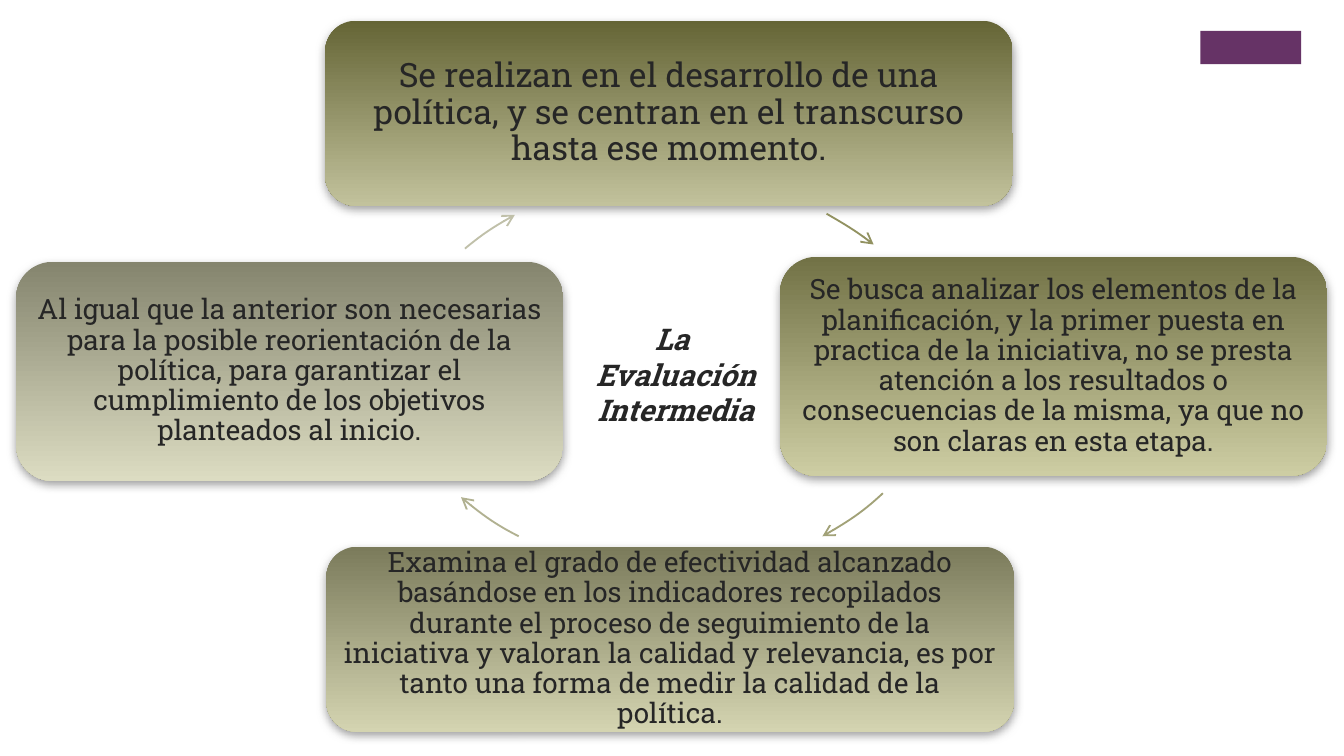
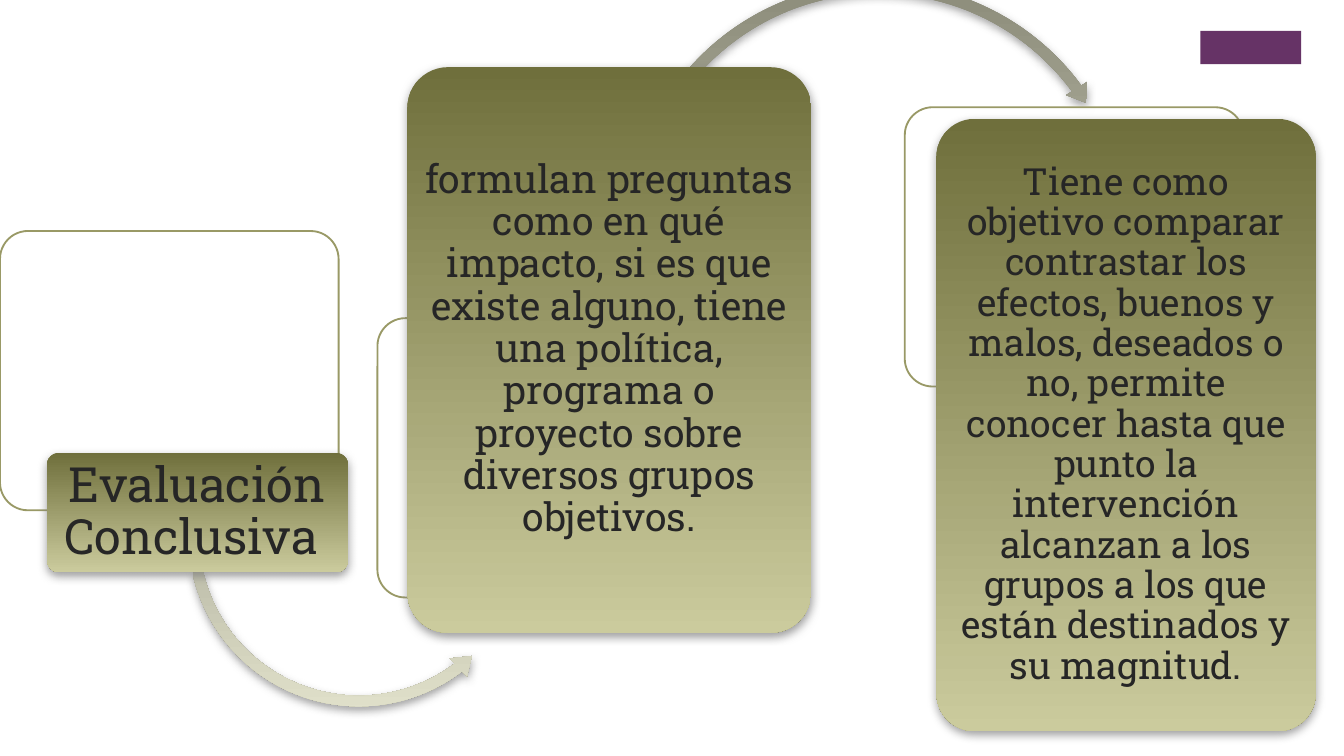
"""Build two slides on intermediate and conclusive policy evaluation."""
from lxml.etree import SubElement
from pptx import Presentation
from pptx.dml.color import RGBColor
from pptx.enum.shapes import MSO_SHAPE
from pptx.enum.text import MSO_ANCHOR, MSO_AUTO_SIZE, PP_ALIGN
from pptx.oxml.ns import qn
from pptx.util import Pt

INK = RGBColor(0x26, 0x26, 0x26)
PURPLE = RGBColor(0x66, 0x33, 0x66)
WHITE = RGBColor(0xFF, 0xFF, 0xFF)
OLIVE = RGBColor(0x99, 0x99, 0x66)
GRAY = RGBColor(0x80, 0x80, 0x80)
MOSS = RGBColor(0x6F, 0x6F, 0x3C), RGBColor(0xCB, 0xCB, 0x9D)
STONE = RGBColor(0x8B, 0x8B, 0x79), RGBColor(0xE1, 0xE1, 0xCB)
TYPE = {"name": "Roboto Slab"}
ROUND = MSO_SHAPE.ROUNDED_RECTANGLE


def shade(slide, kind, place, tones):
    """Add a borderless shape with a vertical gradient and a soft shadow."""
    shape = slide.shapes.add_shape(kind, *map(Pt, place))
    shape.fill.gradient()
    shape.fill.gradient_angle = 270
    for stop, tone in zip(shape.fill.gradient_stops, tones):
        stop.color.rgb = tone
    shape.line.fill.background()
    shape.shadow.inherit = False
    effects = shape._element.spPr.find(qn("a:effectLst"))
    outer = SubElement(effects, qn("a:outerShdw"), blurRad=str(Pt(5)),
                       dist=str(Pt(2)), dir="5400000", rotWithShape="0")
    color = SubElement(outer, qn("a:srgbClr"), val=str(GRAY))
    SubElement(color, qn("a:alpha"), val="75000")
    return shape


def write(shape, lines, form, pads, lead):
    """Set centred paragraphs with the given font values and insets."""
    frame = shape.text_frame
    frame.word_wrap = True
    frame.margin_left = frame.margin_right = Pt(pads[0])
    frame.margin_top = frame.margin_bottom = Pt(pads[1])
    frame.text = "\n".join(lines)
    for para in frame.paragraphs:
        para.alignment = PP_ALIGN.CENTER
        para.line_spacing = lead
        for run in para.runs:
            run.font.color.rgb = INK
            for key, value in {**TYPE, **form}.items():
                setattr(run.font, key, value)
    return frame


deck = Presentation()
deck.slide_width, deck.slide_height = Pt(720), Pt(405)
slides = []
for _ in range(2):
    slide = deck.slides.add_slide(deck.slide_layouts[6])
    badge = slide.shapes.add_shape(MSO_SHAPE.RECTANGLE, Pt(643), Pt(16.6), Pt(54), Pt(17.8))
    badge.fill.solid()
    badge.fill.fore_color.rgb = PURPLE
    badge.line.fill.background()
    badge.shadow.inherit = False
    slides.append(slide)
cycle, steps = slides

WIDE, TALL, RING = (368.4, 99.2), (293.2, 117.4), 310.3
STAGES = [
    ((174.2, 11.1), WIDE, ("656536", "C2C29C"), 18, 5,
     "Se realizan en el desarrollo de una política, y se centran en el transcurso "
     "hasta ese momento.",
     "929261", (214.6, 96.5), [(442.8, 114.5), (451.4, 119.5), (460, 124.6), (468, 131)]),
    ((417.8, 137.6), TALL, ("727246", "CDCDA3"), 15, 4.5,
     "Se busca analizar los elementos de la planificación, y la primer puesta en "
     "practica de la iniciativa, no se presta atención a los resultados o "
     "consecuencias de la misma, ya que no son claras en esta etapa.",
     "A2A278", (211.7, -5), [(473, 264.2), (463, 273.6), (452.2, 280.8), (440.6, 287.3)]),
    ((174.8, 292.9), WIDE, ("7B7B5B", "D4D4B1"), 15, 4.5,
     "Examina el grado de efectividad alcanzado basándose en los indicadores "
     "recopilados durante el proceso de seguimiento de la iniciativa y valoran la "
     "calidad y relevancia, es por tanto una forma de medir la calidad de la política.",
     "B1B191", (195.8, -4.3), [(277.9, 287.3), (266.4, 281.5), (256.3, 274.3), (247, 266.4)]),
    ((8.6, 140.3), TALL, ("85856E", "DCDCC2"), 15, 4.5,
     "Al igual que la anterior son necesarias para la posible reorientación de la "
     "política, para garantizar el cumplimiento de los objetivos planteados al inicio.",
     "C0C0A9", (194.4, 96.5), [(249.1, 133.2), (257.8, 126), (266.4, 120.2), (275.8, 115.2)]),
]
for spot, size, tones, points, pad, words, tint, (left, top), curve in STAGES:
    box = shade(cycle, ROUND, spot + size, map(RGBColor.from_string, tones))
    frame = write(box, [words], {"size": Pt(points)}, (pad, pad), 0.9)
    frame.vertical_anchor = MSO_ANCHOR.MIDDLE
    pen = cycle.shapes.build_freeform(Pt(left), Pt(top))
    pen.add_line_segments([(Pt(left + RING), Pt(top + RING))], close=False)
    arc = pen.convert_to_shape()
    trail = next(arc._element.iter(qn("a:path")))
    for node in list(trail):
        trail.remove(node)
    for tag, knots in (("a:moveTo", curve[:1]), ("a:cubicBezTo", curve[1:])):
        node = SubElement(trail, qn(tag))
        for x, y in knots:
            SubElement(node, qn("a:pt"), x=str(Pt(x - left)), y=str(Pt(y - top)))
    arc.fill.background()
    arc.line.color.rgb = RGBColor.from_string(tint)
    arc.line.width = Pt(1)
    arc.shadow.inherit = False
    SubElement(arc._element.spPr.find(qn("a:ln")), qn("a:tailEnd"), type="arrow")

title = cycle.shapes.add_textbox(Pt(309.7), Pt(168.1), Pt(104.4), Pt(65.5))
frame = write(title, ["La ", "Evaluación", "Intermedia"],
              {"size": Pt(16), "bold": True, "italic": True}, (7.2, 3.6), 1)
frame.auto_size = MSO_AUTO_SIZE.SHAPE_TO_FIT_TEXT

LEFT, RIGHT = MSO_SHAPE.LEFT_CIRCULAR_ARROW, MSO_SHAPE.CIRCULAR_ARROW
CARDS = [
    ((0, 123.8), (25.2, 242.6, 161.3, 64), 26, (3.6, 2.6), "Evaluación Conclusiva ",
     (LEFT, (97.2, 192.2, 190, 190), (0.03, 3.684, 31.688, 100.493, 0.035))),
    ((202.2, 170.5), (218.3, 36, 216.2, 303), 21, (3, 2),
     "formulan preguntas como en qué impacto, si es que existe alguno, tiene una "
     "política, programa o proyecto sobre diversos grupos objetivos.",
     (RIGHT, (331.9, -13, 277.2, 277.2), (0.021, 2.472, 194.201, 124.184, 0.024))),
    ((484.7, 57.5), (501.7, 63.7, 203.2, 328), 20, (3, 2),
     "Tiene como objetivo comparar contrastar los efectos, buenos y malos, deseados "
     "o no, permite conocer hasta que punto la intervención alcanzan a los grupos a "
     "los que están destinados y su magnitud.", None),
]
for spot, place, points, pads, words, turn in CARDS:
    back = steps.shapes.add_shape(ROUND, *map(Pt, spot + (181.4, 149.6)))
    back.adjustments[0] = 0.1
    back.fill.solid()
    back.fill.fore_color.rgb = WHITE
    color = back._element.spPr.find(qn("a:solidFill"))[0]
    SubElement(color, qn("a:alpha"), val="90000")
    back.line.color.rgb = OLIVE
    back.line.width = Pt(1)
    back.shadow.inherit = False
    if turn:
        kind, bounds, bends = turn
        arrow = shade(steps, kind, bounds, STONE)
        for index, bend in enumerate(bends):
            arrow.adjustments[index] = bend
    card = shade(steps, ROUND, place, MOSS)
    card.adjustments[0] = 0.1
    frame = write(card, [words], {"size": Pt(points)}, pads, 0.9)
    frame.vertical_anchor = MSO_ANCHOR.MIDDLE

deck.save("out.pptx")
